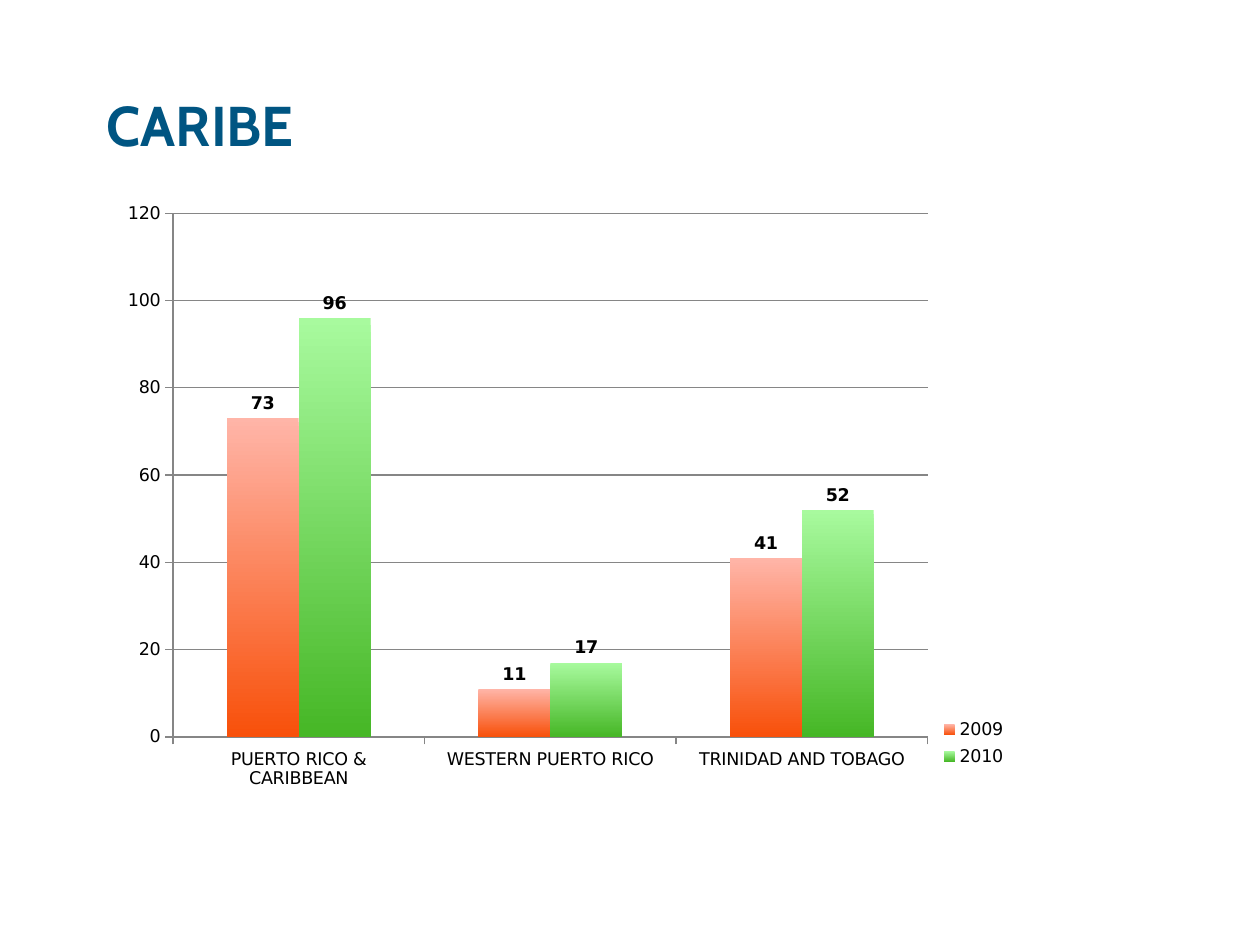
from lxml import etree
from pptx import Presentation
from pptx.chart.data import CategoryChartData
from pptx.dml.color import RGBColor
from pptx.enum.chart import XL_CHART_TYPE, XL_LABEL_POSITION, XL_LEGEND_POSITION, XL_TICK_MARK
from pptx.oxml.ns import qn
from pptx.util import Pt

COLUMNS = XL_CHART_TYPE.COLUMN_CLUSTERED
ABOVE = XL_LABEL_POSITION.OUTSIDE_END
RIGHT = XL_LEGEND_POSITION.RIGHT
OUTSIDE = XL_TICK_MARK.OUTSIDE
GRAY = "868686"
SERIES = [
    ("2009", (73, 11, 41), ("FFB5A8", "F8500A")),
    ("2010", (96, 17, 52), ("A8FA9E", "46B726")),
]


def rgb(color):
    return RGBColor.from_string(color)


def set_layout(parent, position, **values):
    """Place a chart part by fractions of the chart area."""
    for old in parent.findall(qn("c:layout")):
        parent.remove(old)
    layout = etree.Element(qn("c:layout"))
    parent.insert(position, layout)
    manual = etree.SubElement(layout, qn("c:manualLayout"))
    for tag, value in values.items():
        etree.SubElement(manual, qn(f"c:{tag}")).set("val", str(value))


prs = Presentation()
prs.slide_width, prs.slide_height = Pt(720), Pt(540)
s = prs.slides.add_slide(prs.slide_layouts[6])

tf = s.shapes.add_textbox(Pt(54), Pt(48), Pt(612), Pt(90)).text_frame
tf.word_wrap = True
tf.text = "CARIBE"
font = tf.paragraphs[0].runs[0].font
font.name, font.size, font.bold = "Cabin", Pt(32), True
font.color.rgb = rgb("005582")

data = CategoryChartData()
data.categories = ["PUERTO RICO & CARIBBEAN", "WESTERN PUERTO RICO", "TRINIDAD AND TOBAGO"]
for name, values, _ in SERIES:
    data.add_series(name, values)
chart = s.shapes.add_chart(COLUMNS, Pt(62), Pt(108), Pt(526), Pt(348), data).chart
chart.has_title = False
chart.font.name, chart.font.size = "DejaVu Sans", Pt(10)
chart.font.color.rgb = rgb("000000")

value_axis = chart.value_axis
value_axis.minimum_scale, value_axis.maximum_scale, value_axis.major_unit = 0, 120, 20
value_axis.has_major_gridlines = True
for axis in (chart.category_axis, value_axis):
    axis.major_tick_mark = OUTSIDE
for part in (chart.category_axis, value_axis, value_axis.major_gridlines):
    part.format.line.color.rgb = rgb(GRAY)
    part.format.line.width = Pt(0.75)

plot = chart.plots[0]
plot.gap_width, plot.overlap, plot.vary_by_categories = 150, 0, False
for ser, (_, _, colors) in zip(plot.series, SERIES):
    fill = ser.format.fill
    fill.gradient()
    fill.gradient_angle = 270
    for stop, color, position in zip(fill.gradient_stops, colors, (0, 1)):
        stop.color.rgb = rgb(color)
        stop.position = position
    labels = ser.data_labels
    labels.show_value = True
    labels.position = ABOVE
    labels.font.bold = True
    labels.font.size = Pt(10)

chart.has_legend = True
legend = chart.legend
legend.position = RIGHT
legend.include_in_layout = False
legend_xml = chart._chartSpace.find(".//" + qn("c:legend"))
set_layout(legend_xml, 1, xMode="edge", yMode="edge", x=0.9, y=0.86, w=0.08, h=0.1)
plot_area = chart._chartSpace.find(".//" + qn("c:plotArea"))
set_layout(plot_area, 0, layoutTarget="inner", xMode="edge", yMode="edge",
           x=0.07, y=0.04, w=0.82, h=0.86)

prs.save("out.pptx")
